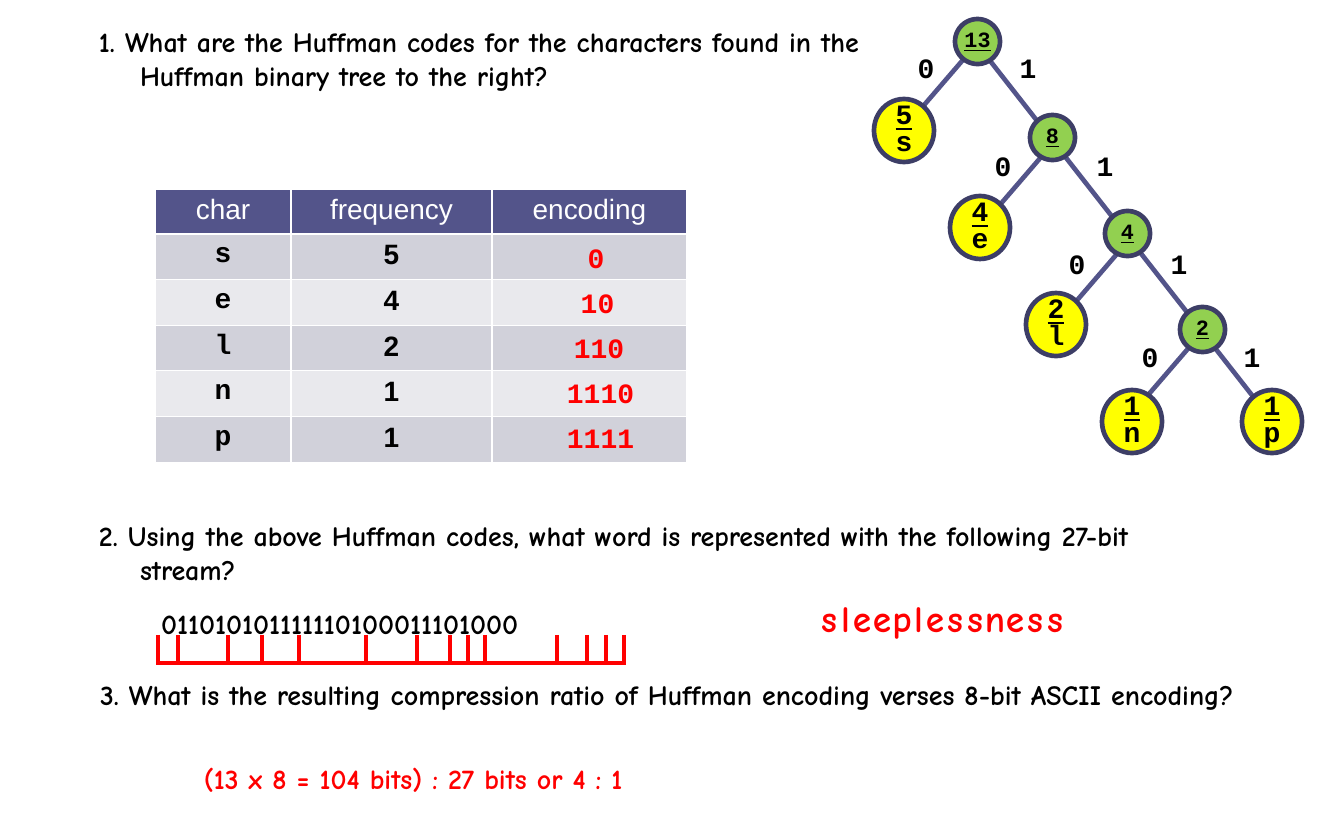
"""Build the Huffman coding exercise slide: code table, binary tree, bit stream and answers."""
from pptx import Presentation
from pptx.dml.color import RGBColor
from pptx.enum.shapes import MSO_CONNECTOR, MSO_SHAPE
from pptx.enum.text import PP_ALIGN
from pptx.oxml.ns import qn
from pptx.util import Emu, Pt
from lxml import etree

LEFT, CENTER = PP_ALIGN.LEFT, PP_ALIGN.CENTER
STRAIGHT, OVAL = MSO_CONNECTOR.STRAIGHT, MSO_SHAPE.OVAL
BLACK = RGBColor(0x00, 0x00, 0x00)
WHITE = RGBColor(0xFF, 0xFF, 0xFF)
RED = RGBColor(0xFF, 0x00, 0x00)
YELLOW = RGBColor(0xFF, 0xFF, 0x00)
GREEN = RGBColor(0x92, 0xD0, 0x50)
INDIGO = RGBColor(0x53, 0x54, 0x8A)
DARK_INDIGO = RGBColor(0x3D, 0x3E, 0x66)
BAND_DARK = RGBColor(0xD1, 0xD1, 0xDA)
BAND_LIGHT = RGBColor(0xE9, 0xE9, 0xED)
COMIC, COURIER, ARIAL = "Comic Neue", "Courier New", "Arial"
PX = 914400 / 112

prs = Presentation()
prs.slide_width, prs.slide_height = Emu(round(1344 * PX)), Emu(round(840 * PX))
slide = prs.slides.add_slide(prs.slide_layouts[6])
shapes = slide.shapes


def add_label(text, box, font, color=BLACK, size=18, align=CENTER):
    frame = shapes.add_textbox(*[Emu(round(n * PX)) for n in box]).text_frame
    frame.word_wrap = True
    if align == CENTER:
        frame.margin_left = frame.margin_right = 0
    frame.text = text
    for paragraph in frame.paragraphs:
        paragraph.alignment = align
        run_font = paragraph.runs[0].font
        run_font.name, run_font.size, run_font.bold = font, Pt(size), True
        run_font.color.rgb = color
    return frame


def add_line(x1, y1, x2, y2, color, width):
    line = shapes.add_connector(STRAIGHT, *[Emu(round(n * PX)) for n in (x1, y1, x2, y2)])
    line.line.color.rgb = color
    line.line.width = Pt(width)
    etree.SubElement(line._element.spPr, qn("a:effectLst"))


code_rows = [("char", "frequency", "encoding"), ("s", "5", ""), ("e", "4", ""),
             ("l", "2", ""), ("n", "1", ""), ("p", "1", "")]
code_table = shapes.add_table(6, 3, *[Emu(round(n * PX)) for n in (155, 189, 532, 272)]).table
for column, width in zip(code_table.columns, (136, 201, 195)):
    column.width = Emu(round(width * PX))
for row, height in zip(code_table.rows, (45, 45, 46) * 2):
    row.height = Emu(round(height * PX))
for r, values in enumerate(code_rows):
    for c, value in enumerate(values):
        cell = code_table.cell(r, c)
        cell.fill.solid()
        cell.fill.fore_color.rgb = INDIGO if r == 0 else BAND_DARK if r % 2 else BAND_LIGHT
        cell.text_frame.text = value
        paragraph = cell.text_frame.paragraphs[0]
        paragraph.alignment = CENTER
        for run in paragraph.runs:
            run.font.name = COURIER if r and c == 0 else ARIAL
            run.font.size = Pt(18)
            run.font.bold = r > 0
            run.font.color.rgb = BLACK if r else WHITE

for i, code in enumerate(("0", "10", "110", "1110", "1111")):
    add_label(code, (580 - 8 * len(code), 235 + 45 * i, 29 + 19 * len(code), 45), COURIER, RED)

questions = [
    ("1. What are the Huffman codes for the characters found in the "
     "Huffman binary tree to the right?", (88, 19, 796, 80)),
    ("2. Using the above Huffman codes, what word is represented with the "
     "following 27-bit stream?", (88, 513, 1137, 80)),
    ("3. What is the resulting compression ratio of Huffman encoding verses "
     "8-bit ASCII encoding?", (89, 672, 1275, 80)),
]
for question, box in questions:
    properties = add_label(question, box, COMIC, align=LEFT).paragraphs[0]._p.get_or_add_pPr()
    hanging = round(41 * PX)
    properties.set("marL", str(hanging))
    properties.set("indent", str(-hanging))

add_label("(13 x 8 = 104 bits) : 27 bits or 4 : 1", (193, 756, 831, 45), COMIC, RED, align=LEFT)
add_label("011010101111110100011101000", (150, 601, 718, 45), COMIC, align=LEFT)

code_breaks = (158, 178, 228, 262, 299, 366, 417, 450, 468, 485, 557, 587, 606, 624)
for start, end in zip(code_breaks, code_breaks[1:]):
    add_line(start, 663, end, 663, RED, 2)
for x in code_breaks:
    add_line(x, 635, x, 665, RED, 2)

letter_left = 804
for letter in "sleeplessness":
    narrow = letter == "l"
    add_label(letter, (letter_left, 590, 43 if narrow else 50, 56), COMIC, RED, 24)
    letter_left += 13 if narrow else 20

for x, y in ((1205, 329), (1129, 240), (1061, 134), (981, 39)):
    add_line(x, y, x - 87, y + 101, INDIGO, 3)
add_line(973, 39, 1273, 422, INDIGO, 3)

leaves = [(count, char, 874 + 76 * i, 99 + 97 * i)
          for i, (count, char) in enumerate(("5s", "4e", "2l", "1n"))]
leaves.append(("1", "p", 1242, 390))
branches = [(total, 955 + 75 * i, 19 + 96 * i) for i, total in enumerate(("13", "8", "4", "2"))]
circles = [(x, y, 60, 63, YELLOW) for _, _, x, y in leaves]
circles += [(x, y, 45, 45, GREEN) for _, x, y in branches]
for x, y, width, height, color in circles:
    circle = shapes.add_shape(OVAL, *[Emu(round(n * PX)) for n in (x, y, width, height)])
    circle.shadow.inherit = False
    circle.fill.solid()
    circle.fill.fore_color.rgb = color
    circle.line.color.rgb = DARK_INDIGO
    circle.line.width = Pt(3)

for count, char, x, y in leaves:
    count_line, char_line = add_label(f"{count}\n{char}", (x + 10, y - 8, 40, 73), COURIER).paragraphs
    count_line.runs[0].font.underline = True
    char_line.line_spacing = 0.8
for total, x, y in branches:
    total_line = add_label(total, (x - 5, y + 1, 55, 38), COURIER, size=14).paragraphs[0]
    total_line.runs[0].font.underline = True

for x, y in ((912, 45), (989, 143), (1063, 241), (1136, 334)):
    add_label("0", (x, y, 28, 45), COURIER)
    add_label("1", (x + 102, y, 28, 45), COURIER)

prs.save("out.pptx")
